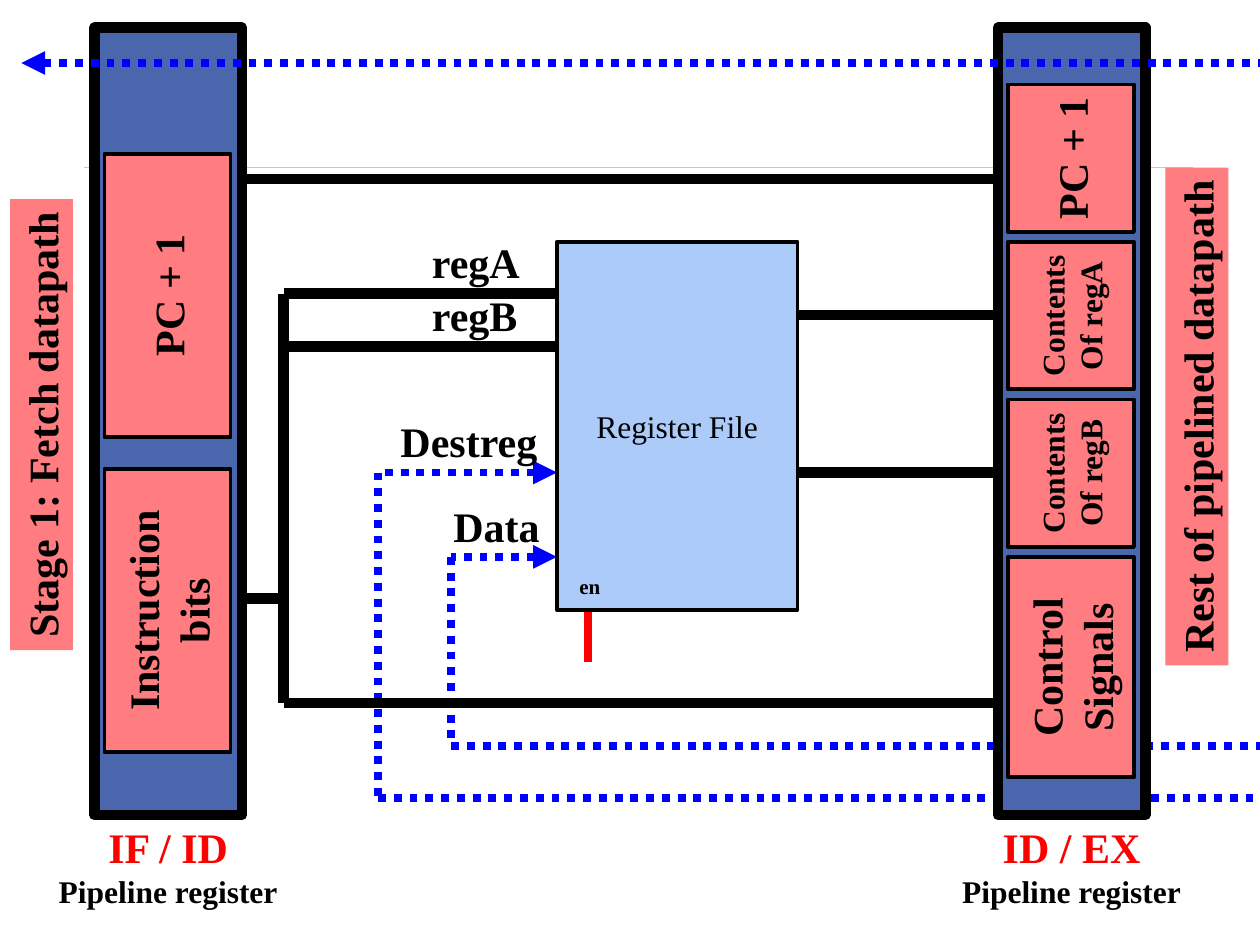
from dataclasses import dataclass
from typing import Optional

from lxml import etree
from pptx import Presentation
from pptx.dml.color import RGBColor
from pptx.enum import dml, shapes, text
from pptx.oxml import ns
from pptx.util import Inches, Pt


@dataclass(frozen=True)
class Theme:
    font: str = "Times New Roman"
    black: str = "000000"
    red: str = "FF0000"
    feedback: str = "0000FF"
    register: str = "4A66AC"
    field: str = "FF7C80"
    pale: str = "ACCBF9"
    large: float = 24
    medium: float = 18
    small: float = 12
    thick: float = 6
    medium_line: float = 4.5
    thin: float = 2.25
    hairline: float = 0.25


T = Theme()


@dataclass(frozen=True)
class Wire:
    x1: float
    y1: float
    x2: float
    y2: float
    color: str = T.black
    width: float = T.thick
    dotted: bool = False
    arrow: bool = False  # arrowhead at the first point


@dataclass(frozen=True)
class Box:
    """A rectangle given by the area it covers; vertical ones read upwards."""
    x: float
    y: float
    w: float
    h: float
    lines: tuple[str, ...] = ()
    fill: Optional[str] = T.field
    outline: float = T.thin
    size: float = T.large
    bold: bool = True
    centred: bool = True
    vertical: bool = True


def draw_wire(slide, wire: Wire) -> None:
    line = slide.shapes.add_connector(
        shapes.MSO_CONNECTOR.STRAIGHT,
        Inches(wire.x1), Inches(wire.y1), Inches(wire.x2), Inches(wire.y2))
    line.line.color.rgb = RGBColor.from_string(wire.color)
    line.line.width = Pt(wire.width)
    if wire.dotted:
        line.line.dash_style = dml.MSO_LINE.ROUND_DOT
    if wire.arrow:
        etree.SubElement(line.line._get_or_add_ln(), ns.qn("a:headEnd"), type="triangle")
    etree.SubElement(line._element.spPr, ns.qn("a:effectLst"))


def write(tf, lines: tuple[str, ...], size: float, bold: bool = True,
          centred: bool = True, color: str = T.black) -> None:
    tf.text = "\n".join(lines)
    for p in tf.paragraphs:
        p.alignment = text.PP_ALIGN.CENTER if centred else text.PP_ALIGN.LEFT
        for r in p.runs:
            r.font.name = T.font
            r.font.size = Pt(size)
            r.font.bold = bold
            r.font.color.rgb = RGBColor.from_string(color)


def draw_box(slide, box: Box) -> None:
    w, h = (box.h, box.w) if box.vertical else (box.w, box.h)
    left, top = box.x + (box.w - w) / 2, box.y + (box.h - h) / 2
    area = Inches(left), Inches(top), Inches(w), Inches(h)
    if box.fill:
        sp = slide.shapes.add_shape(shapes.MSO_SHAPE.RECTANGLE, *area)
        sp.shadow.inherit = False
        sp.fill.solid()
        sp.fill.fore_color.rgb = RGBColor.from_string(box.fill)
        if box.outline:
            sp.line.color.rgb = RGBColor.from_string(T.black)
            sp.line.width = Pt(box.outline)
        else:
            sp.line.fill.background()
    else:
        sp = slide.shapes.add_textbox(*area)
    if box.vertical:
        sp.rotation = 270
    if box.lines:
        tf = sp.text_frame
        tf.word_wrap = False
        tf.vertical_anchor = (text.MSO_ANCHOR.MIDDLE if box.centred
                              else text.MSO_ANCHOR.TOP)
        write(tf, box.lines, box.size, box.bold, box.centred)


def draw_register(slide, x: float, name: str, fields: list[Box]) -> None:
    """Draw a pipeline register with its caption and its fields."""
    width, caption_width = 1.17, 2.67
    draw_box(slide, Box(x, 0.22, width, 6.25, fill=T.register,
                        outline=T.thick, vertical=False))
    caption = slide.shapes.add_textbox(
        Inches(x + (width - caption_width) / 2), Inches(6.47),
        Inches(caption_width), Inches(0.8))
    tf = caption.text_frame
    tf.word_wrap = True
    write(tf, (name, "Pipeline register"), T.large, color=T.red)
    r = tf.paragraphs[1].runs[0]
    r.font.size = Pt(T.medium)
    r.font.color.rgb = RGBColor.from_string(T.black)
    for field in fields:
        draw_box(slide, field)


def feedback(x1: float, y1: float, x2: float, y2: float, arrow: bool = False) -> Wire:
    return Wire(x1, y1, x2, y2, T.feedback, T.medium_line, True, arrow)


def label(x: float, y: float, w: float, h: float, word: str,
          size: float = T.large) -> Box:
    return Box(x, y, w, h, (word,), None, size=size, centred=False, vertical=False)


def stage(x: float, y: float, h: float, name: str) -> Box:
    return Box(x, y, 0.5, h, (name,), outline=0, centred=False)


IF_X, ID_X, BRANCH_X = 1.92, 7.92, 2.25
FILE_LEFT, FILE_RIGHT, EDGE = 4.42, 6.33, 10

WRITE_BACK = [
    wire
    for x, y_in, y_out in ((3, 3.75, 6.33), (3.58, 4.42, 5.92))
    for wire in (feedback(x, y_out, EDGE, y_out),
                 feedback(FILE_LEFT, y_in, x, y_in, arrow=True),
                 feedback(x, y_in, x, y_out))
]
DATA_WIRES = [
    Wire(4.67, 4.83, 4.67, 5.25, T.red, T.medium_line),
    Wire(IF_X, 1.42, ID_X, 1.42),
    *(Wire(FILE_RIGHT, y, ID_X, y) for y in (2.5, 3.75)),
    *(Wire(BRANCH_X, y, FILE_LEFT, y) for y in (2.33, 2.75)),
    Wire(BRANCH_X, 2.33, BRANCH_X, 5.58),
    Wire(BRANCH_X, 4.75, IF_X, 4.75),
    Wire(BRANCH_X, 5.58, ID_X, 5.58),
]
IF_FIELDS = [
    Box(0.83, 1.22 + 2.5 * i, 1, 2.25, lines)
    for i, lines in enumerate((("PC + 1",), ("Instruction", "bits")))
]
ID_FIELDS = [
    Box(8, 0.67 + 1.25 * i, 1, h, lines, size=size)
    for i, (h, size, lines) in enumerate((
        (1.17, T.large, ("PC + 1",)),
        (1.17, T.medium, ("Contents", "Of regA")),
        (1.17, T.medium, ("Contents", "Of regB")),
        (1.75, T.large, ("Control", "Signals")),
    ))
]
REGISTER_FILE = Box(FILE_LEFT, 1.92, FILE_RIGHT - FILE_LEFT, 2.92, ("Register File",),
                    T.pale, size=T.medium, bold=False, vertical=False)
LABELS = [
    label(3.08, 3.25, 1.29, 0.5, "Destreg"),
    label(3.5, 3.92, 0.89, 0.5, "Data"),
    label(3.33, 1.83, 0.9, 0.5, "regA"),
    label(3.33, 2.25, 0.89, 0.5, "regB"),
    label(4.5, 4.5, 0.37, 0.3, "en", T.small),
    stage(0.08, 1.58, 3.58, "Stage 1: Fetch datapath"),
    stage(9.25, 1.33, 3.95, "Rest of pipelined datapath"),
]


def main() -> None:
    prs = Presentation()
    prs.slide_width, prs.slide_height = Inches(10), Inches(7.5)
    slide = prs.slides.add_slide(prs.slide_layouts[6])
    draw_wire(slide, Wire(0.67, 1.33, 9.47, 1.33, T.pale, T.hairline))
    for wire in WRITE_BACK:
        draw_wire(slide, wire)
    draw_register(slide, 0.75, "IF / ID", IF_FIELDS)
    draw_register(slide, ID_X, "ID / EX", ID_FIELDS)
    for wire in DATA_WIRES:
        draw_wire(slide, wire)
    for box in (REGISTER_FILE, *LABELS):
        draw_box(slide, box)
    draw_wire(slide, feedback(0.17, 0.5, EDGE, 0.5, arrow=True))
    prs.save("out.pptx")


if __name__ == "__main__":
    main()
